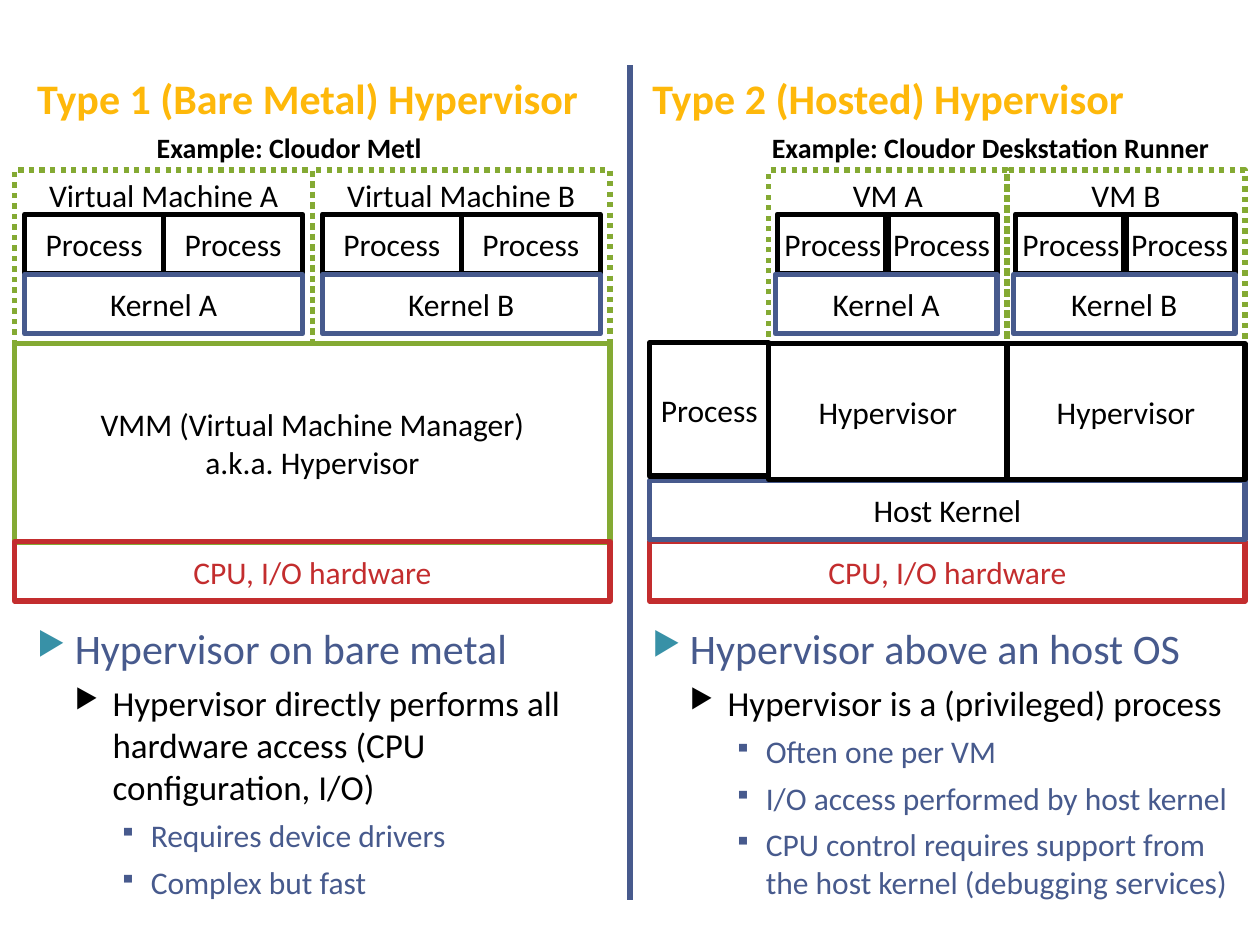
import lxml.etree
import pptx
import pptx.dml.color
import pptx.enum.dml
import pptx.enum.shapes
import pptx.enum.text
import pptx.oxml.ns
import pptx.util

Cm, Pt = pptx.util.Cm, pptx.util.Pt
ANCHOR = pptx.enum.text.MSO_ANCHOR
ALIGN = pptx.enum.text.PP_ALIGN
BLACK, BLUE, GREEN, RED = "000000", "475A8D", "84AA33", "C32D2E"
ORANGE, TEAL = "FEB80A", "3891A7"


def color(hex_code):
    return pptx.dml.color.RGBColor.from_string(hex_code)


def write_text(frame, text, size=18, hex_code=BLACK, bold=False, align=ALIGN.LEFT,
               before=0, margin=0, indent=0, bullet=None, bullet_color=BLACK):
    """Fill the empty first paragraph, or add a new one."""
    para = frame.add_paragraph() if frame.text else frame.paragraphs[0]
    para.alignment = align
    para.space_before = Pt(before)
    span = para.add_run()
    span.text = text
    span.font.name = "Calibri"
    span.font.size = Pt(size)
    span.font.bold = bold
    span.font.color.rgb = color(hex_code)
    properties = para._p.get_or_add_pPr()
    properties.set("marL", str(Cm(margin)))
    properties.set("indent", str(Cm(indent)))
    if bullet:
        qn = pptx.oxml.ns.qn
        fill = lxml.etree.SubElement(properties, qn("a:buClr"))
        lxml.etree.SubElement(fill, qn("a:srgbClr"), val=bullet_color)
        lxml.etree.SubElement(properties, qn("a:buSzPct"), val="76000")
        lxml.etree.SubElement(properties, qn("a:buChar"), char=bullet)


deck = pptx.Presentation()
deck.slide_width, deck.slide_height = Cm(25.4), Cm(19.05)
page = deck.slides.add_slide(deck.slide_layouts[6])

# Divider between the two halves
divider = page.shapes.add_connector(
    pptx.enum.shapes.MSO_CONNECTOR.STRAIGHT, Cm(12.7), Cm(1.32), Cm(12.7), Cm(18.14))
divider.line.color.rgb = color(BLUE)
divider.line.width = Pt(4)
lxml.etree.SubElement(divider._element.spPr, pptx.oxml.ns.qn("a:effectLst"))

# Headings and bullet lists: left, width, title, example, (level, text) items
columns = [
    (0.5, 12, "Type 1 (Bare Metal) Hypervisor", "Example: Cloudor Metl", [
        (0, "Hypervisor on bare metal"),
        (1, "Hypervisor directly performs all hardware access (CPU configuration, I/O)"),
        (2, "Requires device drivers"),
        (2, "Complex but fast")]),
    (12.9, 12.2, "Type 2 (Hosted) Hypervisor", "Example: Cloudor Deskstation Runner", [
        (0, "Hypervisor above an host OS"),
        (1, "Hypervisor is a (privileged) process"),
        (2, "Often one per VM"),
        (2, "I/O access performed by host kernel"),
        (2, "CPU control requires support from the host kernel (debugging services)")]),
]
levels = [
    dict(size=24, hex_code=BLUE, before=6, margin=0.76, indent=-0.76,
         bullet="▶", bullet_color=TEAL),
    dict(size=20, before=5, margin=1.52, indent=-0.76, bullet="▶"),
    dict(size=18, hex_code=BLUE, before=5, margin=2.29, indent=-0.64,
         bullet="▪", bullet_color=BLUE),
]
for left, width, title, example, items in columns:
    heading = page.shapes.add_textbox(Cm(left), Cm(1.52), Cm(width), Cm(1.91)).text_frame
    heading.word_wrap = True
    heading.vertical_anchor = ANCHOR.BOTTOM
    write_text(heading, title, size=24, hex_code=ORANGE, bold=True, before=6)
    write_text(heading, example, size=16, bold=True, before=4, margin=2.41)
    notes = page.shapes.add_textbox(Cm(left), Cm(12.42), Cm(width), Cm(5.69)).text_frame
    notes.word_wrap = True
    for level, text in items:
        write_text(notes, text, **levels[level])

# Diagram boxes: text, left, top, width, height, line colour
boxes = []
# Virtual machines: name, first left, width, process inset and width and step, kernel inset and width
machines = [
    ("Virtual Machine", 0.3, 6, 0.2, 2.8, 2.8, 0.2, 5.6),
    ("VM", 15.5, 4.8, 0.17, 2.24, 2.19, 0.13, 4.47),
]
for name, first, width, inset, process_width, step, kernel_inset, kernel_width in machines:
    for index, letter in enumerate("AB"):
        left = first + index * width
        boxes.append((f"{name} {letter}", left, 3.43, width, 3.5, GREEN))
        for slot in range(2):
            boxes.append(("Process", left + inset + slot * step, 4.32,
                          process_width, 1.2, BLACK))
        boxes.append((f"Kernel {letter}", left + kernel_inset, 5.53,
                      kernel_width, 1.2, BLUE))

# Layers below the machines
boxes += [
    ("VMM (Virtual Machine Manager)\na.k.a. Hypervisor", 0.3, 6.93, 12, 4, GREEN),
    ("CPU, I/O hardware", 0.3, 10.92, 12, 1.2, RED),
    ("CPU, I/O hardware", 13.1, 10.92, 12, 1.2, RED),
    ("Host Kernel", 13.1, 9.68, 12, 1.2, BLUE),
    ("Hypervisor", 20.3, 6.93, 4.8, 2.74, BLACK),
    ("Process", 13.1, 6.91, 2.4, 2.69, BLACK),
    ("Hypervisor", 15.5, 6.93, 4.8, 2.74, BLACK),
]
for text, left, top, width, height, line_color in boxes:
    box = page.shapes.add_shape(pptx.enum.shapes.MSO_SHAPE.RECTANGLE,
                                Cm(left), Cm(top), Cm(width), Cm(height))
    box.shadow.inherit = False
    box.fill.background()
    box.line.color.rgb = color(line_color)
    box.line.width = Pt(3)
    frame = box.text_frame
    frame.word_wrap = True
    frame.vertical_anchor = ANCHOR.MIDDLE
    if text[-2:] in (" A", " B") and line_color == GREEN:
        box.line.dash_style = pptx.enum.dml.MSO_LINE.ROUND_DOT
        frame.vertical_anchor = ANCHOR.TOP
    if text == "Process":
        frame.margin_left = frame.margin_right = Cm(0.1)
    for line in text.split("\n"):
        write_text(frame, line, align=ALIGN.CENTER,
                   hex_code=RED if line_color == RED else BLACK)

deck.save("out.pptx")
